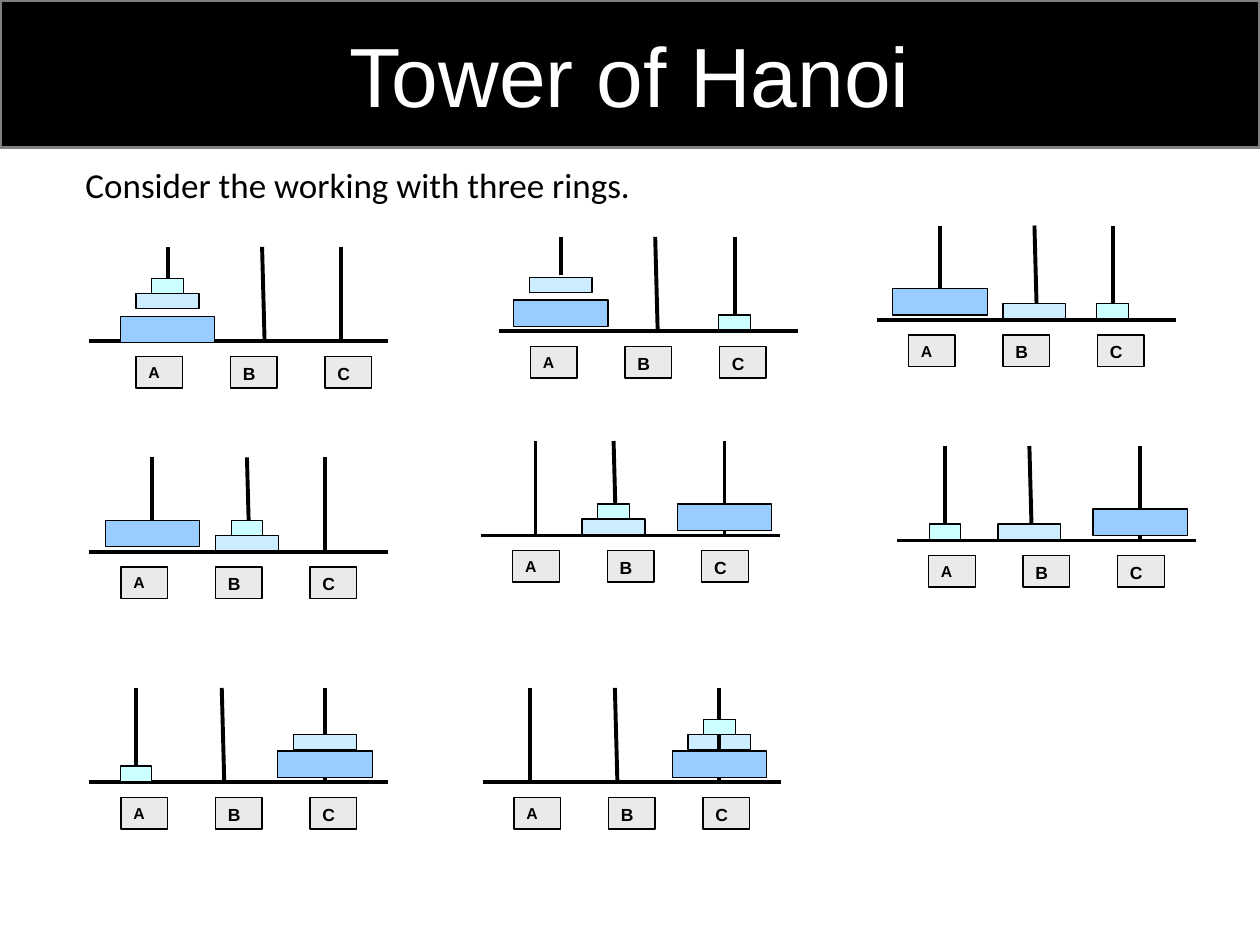
"""Build the Tower of Hanoi slide: eight stages of moving three rings from A to C."""
from dataclasses import dataclass

from lxml.etree import SubElement
from pptx import Presentation
from pptx.dml.color import RGBColor
from pptx.enum.shapes import MSO_CONNECTOR, MSO_SHAPE
from pptx.enum.text import MSO_ANCHOR, PP_ALIGN
from pptx.oxml.ns import qn
from pptx.util import Inches, Pt


@dataclass(frozen=True)
class Theme:
    ink: str = "000000"
    paper: str = "FFFFFF"
    banner_edge: str = "808080"
    label: str = "EAEAEA"
    large: str = "99CCFF"
    medium: str = "CCECFF"
    small: str = "CCFFFF"
    heading_font: str = "Arial"
    body_font: str = "Calibri"
    title_size: int = 48
    body_size: int = 20
    label_size: int = 10
    first_label_size: int = 9
    banner_line: float = 2
    outline: float = 0.75
    stroke: float = 2.25


@dataclass(frozen=True)
class Stage:
    left: float
    base: float
    pegs: dict
    rings: dict
    label_left: float = 0.25
    first_peg_foot: float = 0
    ring_behind_pegs: str = ""


theme = Theme()
deck = Presentation()
deck.slide_width, deck.slide_height = Inches(10), Inches(7.5)
column, row = deck.slide_width / 10, deck.slide_height / 7.5
page = deck.slides.add_slide(deck.slide_layouts[6])


def add_box(shapes, kind, left, top, width, height, fill, edge=theme.ink, weight=theme.outline):
    box = shapes.add_shape(kind, round(left * column), round(top * row),
                           round(width * column), round(height * row))
    box.shadow.inherit = False
    box.fill.solid()
    box.fill.fore_color.rgb = RGBColor.from_string(fill)
    box.line.color.rgb = RGBColor.from_string(edge)
    box.line.width = Pt(weight)
    return box


def write(box, text, size, font, color, bold=False, align=PP_ALIGN.LEFT, anchor=MSO_ANCHOR.TOP):
    frame = box.text_frame
    frame.word_wrap = True
    frame.vertical_anchor = anchor
    frame.text = text
    para = frame.paragraphs[0]
    para.alignment = align
    span = para.runs[0]
    span.font.size, span.font.name, span.font.bold = Pt(size), font, bold
    span.font.color.rgb = RGBColor.from_string(color)


banner = add_box(page.shapes, MSO_SHAPE.ROUNDED_RECTANGLE, 0, 0, 10, 1.17,
                 theme.ink, theme.banner_edge, theme.banner_line)
banner.adjustments[0] = 0
write(banner, "Tower of Hanoi", theme.title_size, theme.heading_font, theme.paper,
      align=PP_ALIGN.CENTER, anchor=MSO_ANCHOR.MIDDLE)
intro = page.shapes.add_textbox(round(0.58 * column), round(1.25 * row),
                                round(9 * column), round(0.67 * row))
write(intro, "Consider the working with three rings.", theme.body_size, theme.body_font, theme.ink)

base_width, peg_height, peg_lean = 2.37, 0.75, 0.02
label_step, label_gap, label_width, label_height = 0.75, 0.12, 0.37, 0.25
ring_styles = {
    "large": (0.75, 0.21, theme.large),
    "medium": (0.5, 0.12, theme.medium),
    "small": (0.25, 0.12, theme.small),
}
stages = [
    Stage(0.71, 2.71, {"A": 0.62, "B": 1.37, "C": 2},
          {"large": ("A", 0.2), "medium": ("A", 0.38), "small": ("A", 0.5)}, 0.37, 0.45),
    Stage(3.96, 2.63, {"A": 0.49, "B": 1.24, "C": 1.87},
          {"large": ("A", 0.25), "medium": ("A", 0.43), "small": ("C", 0.13)}, first_peg_foot=0.45),
    Stage(6.96, 2.54, {"A": 0.5, "B": 1.25, "C": 1.87},
          {"large": ("A", 0.25), "medium": ("B", 0.13), "small": ("C", 0.13)}, first_peg_foot=0.25),
    Stage(0.71, 4.38, {"A": 0.5, "B": 1.25, "C": 1.87},
          {"large": ("A", 0.25), "medium": ("B", 0.13), "small": ("B", 0.25)}, first_peg_foot=0.25),
    Stage(3.82, 4.25, {"A": 0.43, "B": 1.05, "C": 1.93},
          {"large": ("C", 0.25), "medium": ("B", 0.13), "small": ("B", 0.25)}),
    Stage(7.12, 4.29, {"A": 0.38, "B": 1.05, "C": 1.93},
          {"large": ("C", 0.25), "medium": ("B", 0.13), "small": ("A", 0.13)}),
    Stage(0.71, 6.21, {"A": 0.37, "B": 1.05, "C": 1.87},
          {"large": ("C", 0.25), "medium": ("C", 0.38), "small": ("A", 0.13)}),
    Stage(3.83, 6.21, {"A": 0.38, "B": 1.05, "C": 1.88},
          {"large": ("C", 0.25), "medium": ("C", 0.38), "small": ("C", 0.5)},
          ring_behind_pegs="medium"),
]

for stage in stages:
    shapes = page.shapes.add_group_shape().shapes
    strokes = [(stage.left, stage.base, stage.left + base_width, stage.base)]
    for name, offset in stage.pegs.items():
        x = stage.left + offset
        foot = stage.base - (stage.first_peg_foot if name == "A" else 0)
        lean = peg_lean if name == "B" else 0
        strokes.append((x + lean, foot, x, stage.base - peg_height))

    ring_order = sorted(stage.rings, key=lambda size: size != stage.ring_behind_pegs)
    rear_count = 1 if stage.ring_behind_pegs else 0
    parts = [("ring", size) for size in ring_order]
    parts[rear_count:rear_count] = [("stroke", ends) for ends in strokes]
    for kind, detail in parts:
        if kind == "ring":
            peg, lift = stage.rings[detail]
            width, height, fill = ring_styles[detail]
            add_box(shapes, MSO_SHAPE.RECTANGLE, stage.left + stage.pegs[peg] - width / 2,
                    stage.base - lift, width, height, fill)
        else:
            x1, y1, x2, y2 = detail
            stroke = shapes.add_connector(MSO_CONNECTOR.STRAIGHT, round(x1 * column), round(y1 * row),
                                          round(x2 * column), round(y2 * row))
            stroke.line.color.rgb = RGBColor.from_string(theme.ink)
            stroke.line.width = Pt(theme.stroke)
            SubElement(stroke.element.spPr, qn("a:effectLst"))

    for index, name in enumerate(stage.pegs):
        label = add_box(shapes, MSO_SHAPE.RECTANGLE,
                        stage.left + stage.label_left + index * label_step,
                        stage.base + label_gap, label_width, label_height, theme.label)
        size = theme.first_label_size if name == "A" else theme.label_size
        write(label, name, size, theme.heading_font, theme.ink, bold=True)

deck.save("out.pptx")
